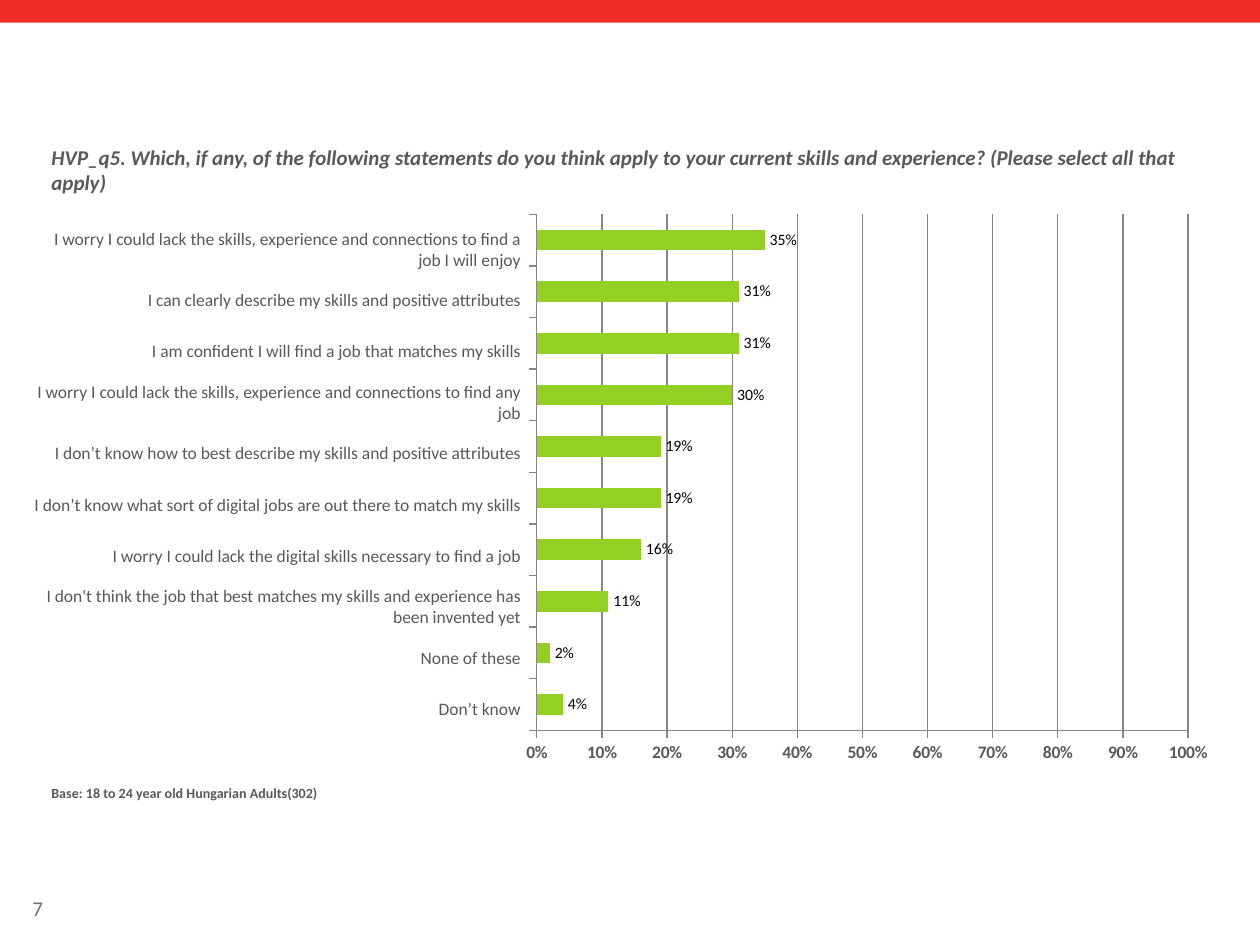
from lxml.etree import SubElement
from pptx import Presentation
from pptx.chart.data import CategoryChartData
from pptx.dml.color import RGBColor
from pptx.enum.chart import XL_CHART_TYPE, XL_LABEL_POSITION, XL_TICK_LABEL_POSITION, XL_TICK_MARK
from pptx.enum.shapes import MSO_SHAPE
from pptx.enum.text import MSO_ANCHOR, PP_ALIGN
from pptx.oxml.ns import qn
from pptx.util import Pt

RED = RGBColor(0xEE, 0x2D, 0x27)
GREEN = RGBColor(0x93, 0xD0, 0x23)
GREY = RGBColor(0x59, 0x59, 0x59)
PALE = RGBColor(0x6D, 0x6F, 0x71)
RULE = RGBColor(0x86, 0x86, 0x86)
BLACK = RGBColor(0, 0, 0)
FACE = "Calibri"

TITLE = ("HVP_q5. Which, if any, of the following statements do you think apply "
         "to your current skills and experience? (Please select all that apply)")
BASE = "Base: 18 to 24 year old Hungarian Adults(302)"
PAGE = "7"
ROWS = [  # statement, share; top to bottom
    ("I worry I could lack the skills, experience and connections to find a job I will enjoy", 0.35),
    ("I can clearly describe my skills and positive attributes", 0.31),
    ("I am confident I will find a job that matches my skills", 0.31),
    ("I worry I could lack the skills, experience and connections to find any job", 0.30),
    ("I don’t know how to best describe my skills and positive attributes", 0.19),
    ("I don’t know what sort of digital jobs are out there to match my skills", 0.19),
    ("I worry I could lack the digital skills necessary to find a job", 0.16),
    ("I don't think the job that best matches my skills and experience has been invented yet", 0.11),
    ("None of these", 0.02),
    ("Don’t know", 0.04),
]
TOP, STEP = 127.5, 29.2  # statement rows
PLOT = {"x": 0.034, "y": 0.02, "w": 0.918, "h": 0.904}  # shares of the chart frame


def style(font, size, color, bold=False, italic=False):
    font.name, font.size, font.bold, font.italic = FACE, Pt(size), bold, italic
    font.color.rgb = color


def add_text(slide, box, text, size, color=GREY, bold=False, italic=False,
             align=PP_ALIGN.LEFT, anchor=MSO_ANCHOR.TOP):
    frame = slide.shapes.add_textbox(*map(Pt, box)).text_frame
    frame.word_wrap = True
    frame.vertical_anchor = anchor
    para = frame.paragraphs[0]
    para.alignment = align
    run = para.add_run()
    run.text = text
    style(run.font, size, color, bold, italic)


def fix_plot(chart):
    """Pin the inner plot area so the bars line up with the statements."""
    area = chart.plots[0]._element.getparent()
    layout = area.find(qn("c:layout"))
    if layout is None:
        layout = SubElement(area, qn("c:layout"))
        area.insert(0, layout)
    manual = SubElement(layout, qn("c:manualLayout"))
    marks = {"layoutTarget": "inner", "xMode": "edge", "yMode": "edge", **PLOT}
    for name, val in marks.items():
        SubElement(manual, qn(f"c:{name}")).set("val", str(val))


def add_bars(slide):
    data = CategoryChartData(number_format="0%")
    data.categories = [str(i + 1) for i in range(len(ROWS))]
    data.add_series("Series 1", [share for _, share in reversed(ROWS)])
    chart = slide.shapes.add_chart(
        XL_CHART_TYPE.BAR_CLUSTERED, Pt(293), Pt(116), Pt(405.4), Pt(326.2), data).chart
    chart.has_legend = chart.has_title = False
    style(chart.font, 18, PALE)
    chart.font.name = "Manrope"
    fix_plot(chart)

    plot = chart.plots[0]
    plot.gap_width, plot.overlap = 150, -10
    plot.vary_by_categories = False
    fill = plot.series[0].format.fill
    fill.solid()
    fill.fore_color.rgb = GREEN
    plot.has_data_labels = True
    labels = plot.data_labels
    labels.show_value = True
    labels.position = XL_LABEL_POSITION.OUTSIDE_END
    labels.number_format, labels.number_format_is_linked = "0%", False
    style(labels.font, 9, BLACK)

    cat, val = chart.category_axis, chart.value_axis
    cat.tick_label_position = XL_TICK_LABEL_POSITION.NONE
    val.tick_label_position = XL_TICK_LABEL_POSITION.LOW
    val.minimum_scale, val.maximum_scale, val.major_unit = 0, 1, 0.1
    val.has_major_gridlines = True
    val.tick_labels.number_format = "0%"
    val.tick_labels.number_format_is_linked = False
    for axis in (cat, val):
        axis.major_tick_mark = XL_TICK_MARK.OUTSIDE
        style(axis.tick_labels.font, 10, GREY, bold=axis is val)
    for part in (cat, val, val.major_gridlines):
        part.format.line.color.rgb = RULE
        part.format.line.width = Pt(0.75)


def main():
    deck = Presentation()
    deck.slide_width, deck.slide_height = Pt(720), Pt(540)
    slide = deck.slides.add_slide(deck.slide_layouts[6])

    band = slide.shapes.add_shape(MSO_SHAPE.RECTANGLE, 0, 0, Pt(720), Pt(13))
    band.shadow.inherit = False
    band.fill.solid()
    band.fill.fore_color.rgb = RED
    band.line.fill.background()

    add_text(slide, (11.5, 508.3, 55.4, 21.6), PAGE, 12, PALE, anchor=MSO_ANCHOR.MIDDLE)
    add_text(slide, (22.3, 79.2, 676, 36.7), TITLE, 12, bold=True, italic=True)
    add_bars(slide)
    for i, (text, _) in enumerate(ROWS):
        add_text(slide, (11.5, TOP + i * STEP, 293, STEP), text, 10,
                 align=PP_ALIGN.RIGHT, anchor=MSO_ANCHOR.MIDDLE)
    add_text(slide, (22.3, 445, 676, 31), BASE, 8, bold=True)
    deck.save("out.pptx")


if __name__ == "__main__":
    main()
